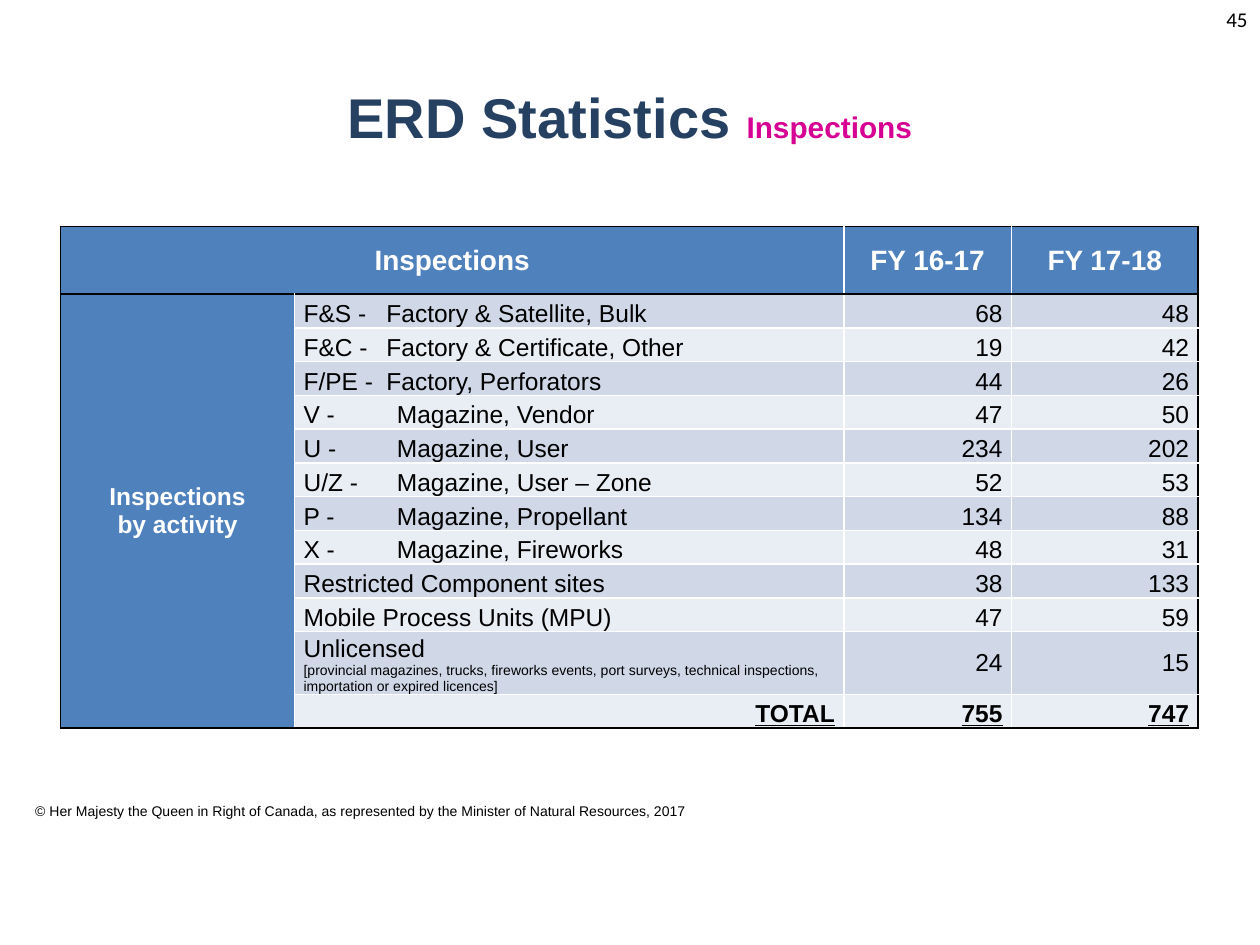
"""Build the slide of ERD inspection counts by activity."""
from dataclasses import dataclass

from lxml.etree import SubElement
from pptx import Presentation
from pptx.dml.color import RGBColor
from pptx.enum.text import MSO_ANCHOR, PP_ALIGN
from pptx.oxml.ns import qn
from pptx.util import Cm, Pt


@dataclass(frozen=True)
class Theme:
    face: str = "Arial"
    page_face: str = "Calibri"
    navy: str = "254061"
    pink: str = "D60093"
    blue: str = "4F81BD"
    dark: str = "D0D8E8"
    pale: str = "E9EDF4"
    black: str = "000000"
    white: str = "FFFFFF"
    title: int = 32
    topic: int = 17
    head: int = 16
    body: int = 14
    page: int = 12
    small: int = 8


THEME = Theme()
WIDTHS = [4.72, 11.07, 3.38, 3.76]
HEAD_HIGH, ROW_HIGH, NOTE_HIGH = 1.36, 0.68, 1.27
PLANT_TAB, STORE_TAB = 1.67, 1.88
NOTE = ("[provincial magazines, trucks, fireworks events, port surveys, "
        "technical inspections, importation or expired licences]")
HEADS = ["Inspections", "", "FY 16-17", "FY 17-18"]
ROWS = [
    ("F&S -\tFactory & Satellite, Bulk", 68, 48),
    ("F&C -\tFactory & Certificate, Other", 19, 42),
    ("F/PE -\tFactory, Perforators", 44, 26),
    ("V -\tMagazine, Vendor", 47, 50),
    ("U -\tMagazine, User", 234, 202),
    ("U/Z -\tMagazine, User – Zone", 52, 53),
    ("P -\tMagazine, Propellant", 134, 88),
    ("X -\tMagazine, Fireworks", 48, 31),
    ("Restricted Component sites", 38, 133),
    ("Mobile Process Units (MPU)", 47, 59),
    ("Unlicensed\n" + NOTE, 24, 15),
    ("TOTAL", 755, 747),
]


def style(font, size, color, bold=False, face=THEME.face):
    """Set the look of a font."""
    font.name, font.size, font.bold = face, Pt(size), bold
    font.color.rgb = RGBColor.from_string(color)


def add_text(slide, place, text, align=PP_ALIGN.LEFT):
    """Add a wrapped text box and return its frame and paragraph."""
    frame = slide.shapes.add_textbox(*map(Cm, place)).text_frame
    frame.word_wrap = True
    line = frame.paragraphs[0]
    line.text, line.alignment = text, align
    return frame, line


def add_title(slide):
    """Add the two-tone title."""
    frame, line = add_text(slide, (0, 0.76, 25.4, 3.18), "", PP_ALIGN.CENTER)
    frame.vertical_anchor = MSO_ANCHOR.MIDDLE
    parts = [("ERD Statistics ", THEME.title, THEME.navy),
             ("Inspections", THEME.topic, THEME.pink)]
    for text, size, color in parts:
        run = line.add_run()
        run.text = text
        style(run.font, size, color, True)


def add_tab(line, stop):
    """Add a left tab stop to a paragraph."""
    tabs = SubElement(line._p.get_or_add_pPr(), qn("a:tabLst"))
    SubElement(tabs, qn("a:tab"), pos=str(Cm(stop)), algn="l")


def add_edges(cell, row, col):
    """Draw black lines round the table and under its head, white elsewhere."""
    end_row, end_col = row + cell.span_height, col + cell.span_width
    edges = {
        "a:lnL": col == 0,
        "a:lnR": end_col == len(WIDTHS),
        "a:lnT": row in (0, 1),
        "a:lnB": end_row in (1, len(ROWS) + 1),
    }
    for tag, outer in edges.items():
        edge = SubElement(cell._tc.get_or_add_tcPr(), qn(tag), w=str(Pt(1)))
        fill = SubElement(edge, qn("a:solidFill"))
        SubElement(fill, qn("a:srgbClr"),
                   val=THEME.black if outer else THEME.white)


def fill_cell(cell, text, align, anchor, fill, size, color, bold):
    """Write and paint one table cell."""
    cell.text = text
    cell.vertical_anchor = anchor
    cell.margin_left = cell.margin_right = Cm(0.18)
    cell.margin_top = cell.margin_bottom = 0
    cell.fill.solid()
    cell.fill.fore_color.rgb = RGBColor.from_string(fill)
    for line in cell.text_frame.paragraphs:
        line.alignment = align
        if "\t" in text:
            add_tab(line, PLANT_TAB if "Factory" in text else STORE_TAB)
        style(line.font, size, color, bold)


def fill_head(cell, text, size=THEME.head):
    """Write a white heading on blue."""
    fill_cell(cell, text, PP_ALIGN.CENTER, MSO_ANCHOR.MIDDLE, THEME.blue,
              size, THEME.white, True)


def fill_row(table, row, label, *counts):
    """Write one activity and its counts."""
    total, noted = label == "TOTAL", "\n" in label
    fill = THEME.dark if row % 2 else THEME.pale
    for col, text in enumerate([label, *map(str, counts)], 1):
        cell = table.cell(row, col)
        right = col > 1 or total
        mid = noted and col > 1
        fill_cell(cell, text, PP_ALIGN.RIGHT if right else PP_ALIGN.LEFT,
                  MSO_ANCHOR.MIDDLE if mid else MSO_ANCHOR.BOTTOM,
                  fill, THEME.body, THEME.black, total)
        for line in cell.text_frame.paragraphs:
            line.font.underline = total
    if noted:
        note = table.cell(row, 1).text_frame.paragraphs[1]
        note.font.size = Pt(THEME.small)


def add_counts(slide):
    """Add the table of inspections."""
    highs = [HEAD_HIGH] + [NOTE_HIGH if "\n" in row[0] else ROW_HIGH
                           for row in ROWS]
    place = map(Cm, (1.22, 4.57, sum(WIDTHS), sum(highs)))
    table = slide.shapes.add_table(len(highs), len(WIDTHS), *place).table
    table.first_row = table.horz_banding = False
    for column, width in zip(table.columns, WIDTHS):
        column.width = Cm(width)
    for row, high in zip(table.rows, highs):
        row.height = Cm(high)
    table.cell(0, 0).merge(table.cell(0, 1))
    table.cell(1, 0).merge(table.cell(len(ROWS), 0))
    for row in range(len(highs)):
        for col in range(len(WIDTHS)):
            add_edges(table.cell(row, col), row, col)
    for col, text in enumerate(HEADS):
        if text:
            fill_head(table.cell(0, col), text)
    fill_head(table.cell(1, 0), "Inspections\vby activity", THEME.body)
    for row, data in enumerate(ROWS, 1):
        fill_row(table, row, *data)


def main():
    """Build and save the slide."""
    deck = Presentation()
    deck.slide_width, deck.slide_height = Cm(25.4), Cm(19.05)
    slide = deck.slides.add_slide(deck.slide_layouts[6])
    _, legal = add_text(
        slide, (0.46, 16.05, 13.82, 0.94),
        "© Her Majesty the Queen in Right of Canada, as represented by "
        "the Minister of Natural Resources, 2017")
    style(legal.font, THEME.small, THEME.black)
    add_title(slide)
    add_counts(slide)
    _, page = add_text(slide, (22.91, 0, 2.49, 1.32), "45", PP_ALIGN.RIGHT)
    style(page.font, THEME.page, THEME.black, face=THEME.page_face)
    deck.save("out.pptx")


if __name__ == "__main__":
    main()
